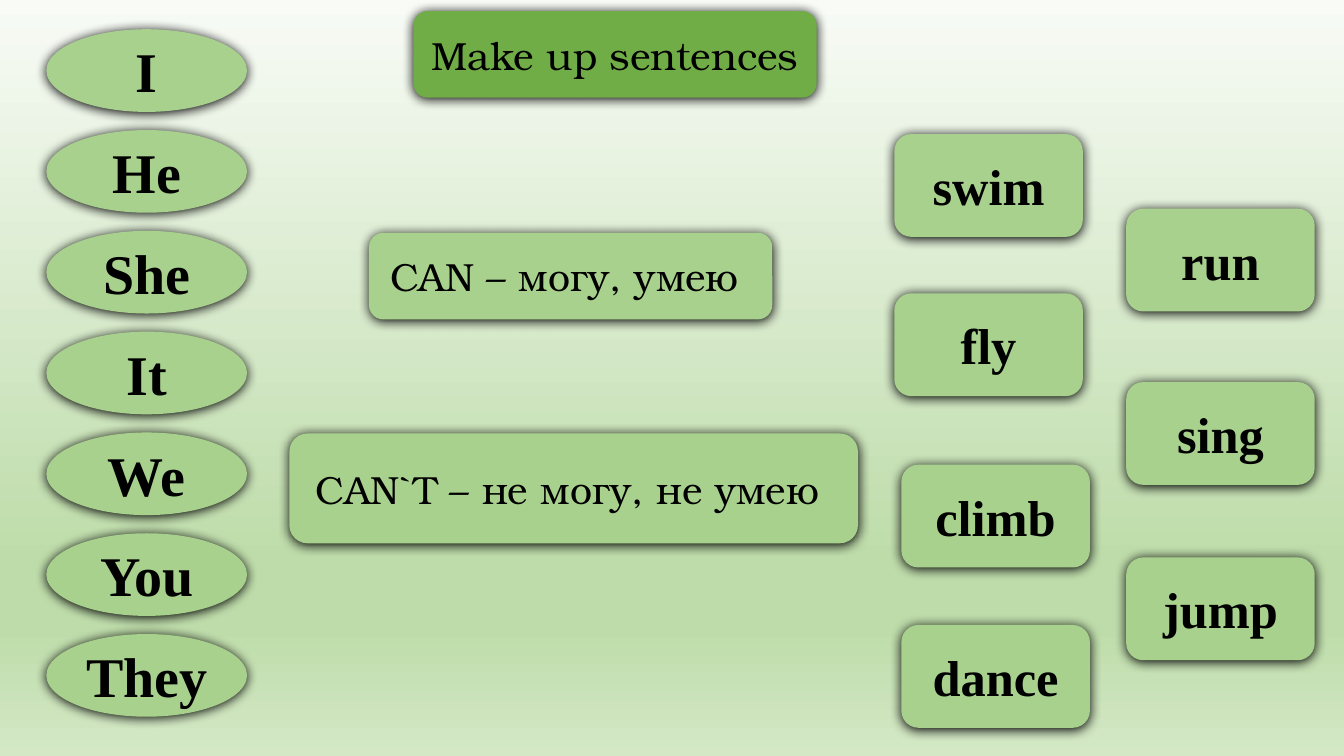
from dataclasses import dataclass

from lxml import etree
from pptx import Presentation
from pptx.dml.color import RGBColor
from pptx.enum.shapes import MSO_SHAPE
from pptx.enum.text import MSO_ANCHOR, PP_ALIGN
from pptx.oxml.ns import qn
from pptx.slide import Slide
from pptx.util import Inches, Pt

ELLIPSE = MSO_SHAPE.OVAL
ROUNDED = MSO_SHAPE.ROUNDED_RECTANGLE
MIDDLE = MSO_ANCHOR.MIDDLE
CENTER = PP_ALIGN.CENTER


@dataclass(frozen=True)
class Theme:
    black: str = "000000"
    light_green: str = "A9D18E"
    green: str = "70AD47"
    background: tuple = ((0, "F8FBF6"), (74, "BEDCAA"), (83, "BEDCAA"), (100, "D4E8C6"))
    phrase_font: str = "TeX Gyre Bonum"
    word_font: str = "Times New Roman"
    phrase_size: int = 28
    verb_size: int = 36
    pronoun_size: int = 40
    shadow_blur: float = 8.5
    shadow_distance: float = 1


THEME = Theme()


@dataclass(frozen=True)
class Card:
    text: str
    left: float
    top: float
    width: float
    height: float


PRONOUNS = [
    Card(pronoun, 0.46, 0.29 + index, 1.99, 0.82)
    for index, pronoun in enumerate(("I", "He", "She", "It", "We", "You", "They"))
]
VERBS = [
    Card(verb, left, top, 1.87, 1.02)
    for verb, left, top in (
        ("swim", 8.87, 1.33),
        ("fly", 8.87, 2.91),
        ("climb", 8.94, 4.61),
        ("dance", 8.94, 6.2),
        ("run", 11.17, 2.07),
        ("sing", 11.17, 3.79),
        ("jump", 11.17, 5.53),
    )
]
MEANINGS = [
    Card("CAN – могу, умею ", 3.66, 2.31, 4, 0.86),
    Card("CAN`T – не могу, не умею ", 2.87, 4.3, 5.64, 1.09),
]
TITLE = Card("Make up sentences", 4.1, 0.11, 4, 0.86)


def paint_background(slide: Slide) -> None:
    fill = slide.background.fill
    fill.gradient()
    fill.gradient_angle = 270
    stops = slide.element.find(".//" + qn("a:gsLst"))
    for stop in list(stops):
        stops.remove(stop)
    for percent, color in THEME.background:
        stop = etree.SubElement(stops, qn("a:gs"), pos=str(percent * 1000))
        etree.SubElement(stop, qn("a:srgbClr"), val=color)


def add_shadow(shape) -> None:
    shape.shadow.inherit = False
    effects = shape.element.spPr.find(qn("a:effectLst"))
    shadow = etree.SubElement(
        effects,
        qn("a:outerShdw"),
        blurRad=str(Pt(THEME.shadow_blur)),
        dist=str(Pt(THEME.shadow_distance)),
        dir="5400000",
        algn="ctr",
        rotWithShape="0",
    )
    etree.SubElement(shadow, qn("a:srgbClr"), val=THEME.black)


def write_text(shape, text: str, *, font: str, size: int, bold: bool) -> None:
    frame = shape.text_frame
    frame.word_wrap = True
    frame.vertical_anchor = MIDDLE
    paragraph = frame.paragraphs[0]
    paragraph.alignment = CENTER
    run = paragraph.add_run()
    run.text = text
    run.font.name = font
    run.font.size = Pt(size)
    run.font.bold = bold
    run.font.color.rgb = RGBColor.from_string(THEME.black)


def add_card(
    slide: Slide,
    card: Card,
    *,
    size: int,
    outline: MSO_SHAPE = ROUNDED,
    color: str = THEME.light_green,
    font: str = THEME.word_font,
    bold: bool = True,
) -> None:
    shape = slide.shapes.add_shape(
        outline, Inches(card.left), Inches(card.top), Inches(card.width), Inches(card.height)
    )
    shape.fill.solid()
    shape.fill.fore_color.rgb = RGBColor.from_string(color)
    shape.line.fill.background()
    add_shadow(shape)
    write_text(shape, card.text, font=font, size=size, bold=bold)


def main() -> None:
    presentation = Presentation()
    presentation.slide_width = Inches(13.33)
    presentation.slide_height = Inches(7.5)
    slide = presentation.slides.add_slide(presentation.slide_layouts[6])
    paint_background(slide)
    for card in PRONOUNS:
        add_card(slide, card, size=THEME.pronoun_size, outline=ELLIPSE)
    for card in VERBS:
        add_card(slide, card, size=THEME.verb_size)
    phrase = {"size": THEME.phrase_size, "font": THEME.phrase_font, "bold": False}
    for card in MEANINGS:
        add_card(slide, card, **phrase)
    add_card(slide, TITLE, color=THEME.green, **phrase)
    presentation.save("out.pptx")


if __name__ == "__main__":
    main()
